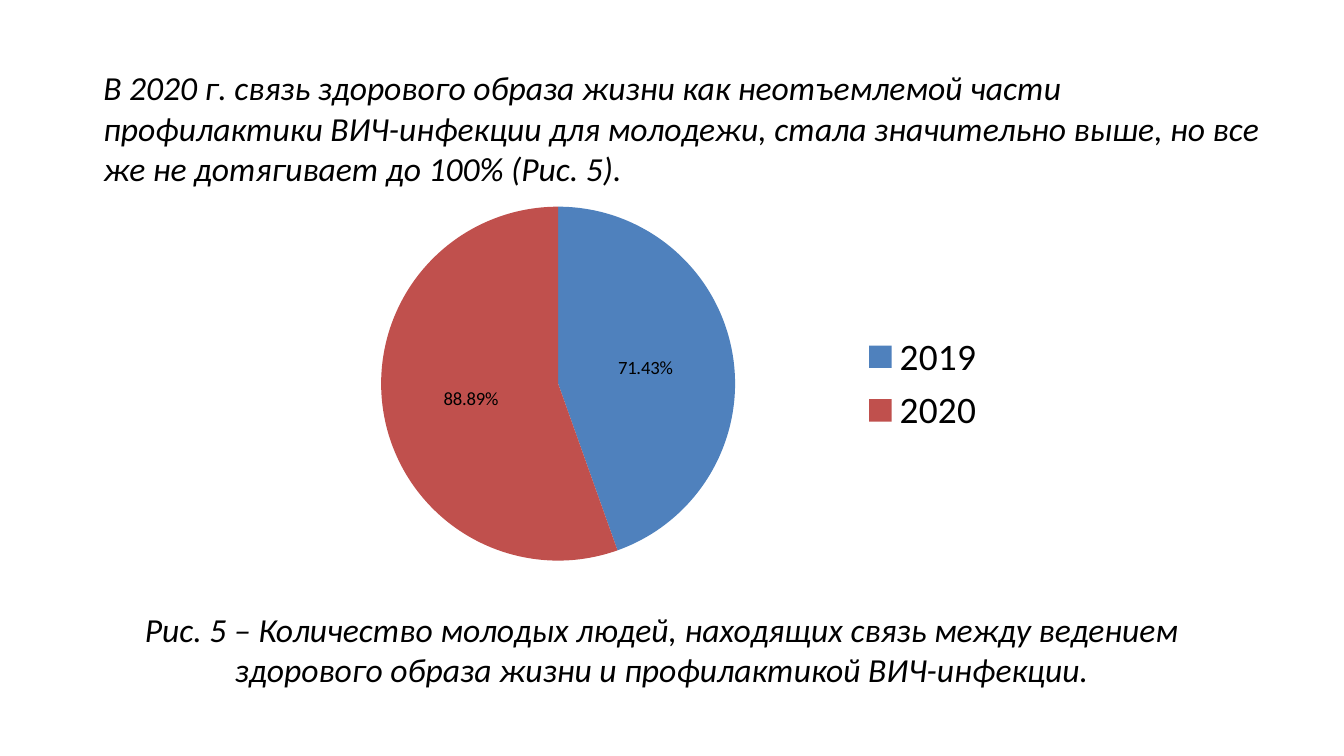
from pptx import Presentation
from pptx.chart.data import CategoryChartData
from pptx.dml.color import RGBColor
from pptx.enum.chart import XL_CHART_TYPE, XL_LABEL_POSITION, XL_LEGEND_POSITION
from pptx.enum.text import PP_ALIGN
from pptx.util import Inches, Pt

FONT = "Calibri"
INK = "000000"
INTRO = ("В 2020 г. связь здорового образа жизни как неотъемлемой части "
         "профилактики ВИЧ-инфекции для молодежи, стала значительно выше, "
         "но все же не дотягивает до 100% (Рис. 5).")
CAPTION = ("Рис. 5 – Количество молодых людей, находящих связь между ведением "
           "здорового образа жизни и профилактикой ВИЧ-инфекции.")
# left, top, width, height in inches
TEXTS = [
    (INTRO, (0.67, 0.45, 8.82, 1.01), PP_ALIGN.LEFT),
    (CAPTION, (0.83, 4.48, 8.19, 0.71), PP_ALIGN.CENTER),
]
PIE_BOX = (1.93, 1.4, 5.51, 2.91)
# year, share, colour
SHARES = [("2019", 0.7143, "4F81BD"), ("2020", 0.8889, "C0504D")]


def style(font, size):
    font.name, font.size = FONT, Pt(size)
    font.color.rgb = RGBColor.from_string(INK)


def add_text(slide, text, box, align):
    frame = slide.shapes.add_textbox(*map(Inches, box)).text_frame
    frame.word_wrap = True
    frame.text = text
    line = frame.paragraphs[0]
    line.alignment = align
    font = line.runs[0].font
    style(font, 18)
    font.italic = True


def add_pie(slide):
    years, values, colours = zip(*SHARES)
    data = CategoryChartData(number_format="0.00%")
    data.categories = years
    data.add_series("Series 1", values)
    chart = slide.shapes.add_chart(
        XL_CHART_TYPE.PIE, *map(Inches, PIE_BOX), data).chart
    style(chart.font, 10)
    chart.has_title = False
    chart.has_legend = True
    chart.legend.position = XL_LEGEND_POSITION.RIGHT
    chart.legend.include_in_layout = False
    style(chart.legend.font, 20)

    plot = chart.plots[0]
    plot.vary_by_categories = True
    plot.has_data_labels = True
    labels = plot.data_labels
    labels.show_value = True
    labels.show_percentage = False
    labels.number_format = "0.00%"
    labels.number_format_is_linked = False
    labels.position = XL_LABEL_POSITION.CENTER
    style(labels.font, 10)
    for i, colour in enumerate(colours):
        fill = plot.series[0].points[i].format.fill
        fill.solid()
        fill.fore_color.rgb = RGBColor.from_string(colour)


def main():
    deck = Presentation()
    deck.slide_width = Inches(10)
    deck.slide_height = deck.slide_width * 9 // 16
    slide = deck.slides.add_slide(deck.slide_layouts[6])
    add_pie(slide)
    for text, box, align in TEXTS:
        add_text(slide, text, box, align)
    deck.save("out.pptx")


if __name__ == "__main__":
    main()
